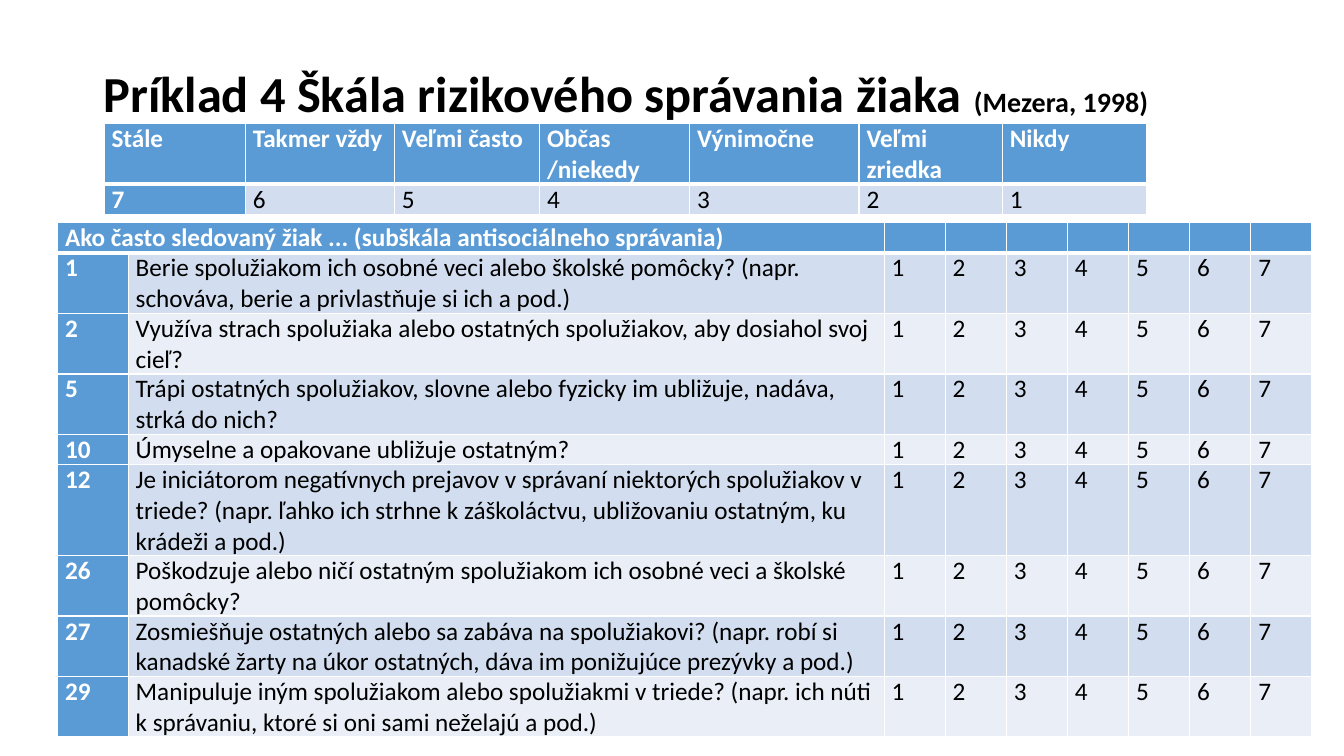
from dataclasses import dataclass

from lxml import etree
from pptx import Presentation
from pptx import util as u
from pptx.dml.color import RGBColor
from pptx.enum import text
from pptx.oxml import ns

COLORS = {
    "accent": "5B9BD5",
    "band_dark": "D2DEEF",
    "band_light": "EAEFF7",
    "white": "FFFFFF",
    "black": "000000",
}
FONT = "Calibri"
RATINGS = [str(rating) for rating in range(1, 8)]


@dataclass
class Grid:
    left: float
    top: float
    height: float
    widths: list[float]
    row_heights: list[float]
    rows: list[list[str]]
    header_span: int = 1


@dataclass
class Question:
    number: int
    wording: str
    height: float


QUESTIONS = [
    Question(1, "Berie spolužiakom ich osobné veci alebo školské pomôcky? (napr. "
                "schováva, berie a privlastňuje si ich a pod.)", 1.5),
    Question(2, "Využíva strach spolužiaka alebo ostatných spolužiakov, "
                "aby dosiahol svoj cieľ?", 1.02),
    Question(5, "Trápi ostatných spolužiakov, slovne alebo fyzicky im ubližuje, "
                "nadáva, strká do nich?", 1.02),
    Question(10, "Úmyselne a opakovane ubližuje ostatným?", 0.51),
    Question(12, "Je iniciátorom negatívnych prejavov v správaní niektorých "
                 "spolužiakov v triede? (napr. ľahko ich strhne k záškoláctvu, "
                 "ubližovaniu ostatným, ku krádeži a pod.)", 2.01),
    Question(26, "Poškodzuje alebo ničí ostatným spolužiakom ich osobné veci "
                 "a školské pomôcky?", 1.02),
    Question(27, "Zosmiešňuje ostatných alebo sa zabáva na spolužiakovi? (napr. robí si "
                 "kanadské žarty na úkor ostatných, dáva im ponižujúce prezývky "
                 "a pod.)", 1.5),
    Question(29, "Manipuluje iným spolužiakom alebo spolužiakmi v triede? (napr. ich núti "
                 "k správaniu, ktoré si oni sami neželajú a pod.)", 1.5),
]

SCALE = Grid(
    left=2.62, top=3.12, height=2.29,
    widths=[3.56, 3.76, 3.66, 3.78, 4.27, 3.61, 3.63],
    row_heights=[1.04, 0.53],
    rows=[
        ["Stále", "Takmer vždy", "Veľmi často", "Občas\n/niekedy", "Výnimočne",
         "Veľmi zriedka", "Nikdy"],
        RATINGS[::-1],
    ],
)
SURVEY = Grid(
    left=1.45, top=5.61, height=12.95,
    widths=[1.78, 19.05] + [1.54] * len(RATINGS),
    row_heights=[0.51] + [question.height for question in QUESTIONS],
    rows=[["Ako často sledovaný žiak ... (subškála antisociálneho správania)", ""]
          + [""] * len(RATINGS)]
    + [[str(question.number), question.wording] + RATINGS for question in QUESTIONS],
    header_span=2,
)


def color(name: str) -> RGBColor:
    return RGBColor.from_string(COLORS[name])


def add_borders(cell, widths: dict[str, float]) -> None:
    properties = cell._tc.get_or_add_tcPr()
    for side, width in widths.items():
        line = etree.SubElement(properties, ns.qn(f"a:ln{side}"), w=str(u.Pt(width)))
        fill = etree.SubElement(line, ns.qn("a:solidFill"))
        etree.SubElement(fill, ns.qn("a:srgbClr"), val=COLORS["white"])


def style_cell(cell, row: int, column: int) -> None:
    heading = row == 0 or column == 0
    band = "band_dark" if row % 2 else "band_light"
    add_borders(cell, {"L": 1, "R": 1, "T": 3 if row == 1 else 1, "B": 3 if row == 0 else 1})
    cell.fill.solid()
    cell.fill.fore_color.rgb = color("accent" if heading else band)
    cell.margin_left = cell.margin_right = u.Cm(0.19)
    cell.margin_top = cell.margin_bottom = u.Cm(0)
    for para in cell.text_frame.paragraphs:
        para.font.name = FONT
        para.font.size = u.Pt(18)
        para.font.bold = heading
        para.font.color.rgb = color("white" if heading else "black")


def add_grid(page, grid: Grid) -> None:
    frame = page.shapes.add_table(
        len(grid.rows), len(grid.widths), u.Cm(grid.left), u.Cm(grid.top),
        u.Cm(sum(grid.widths)), u.Cm(grid.height))
    table = frame.table
    for column, width in zip(table.columns, grid.widths):
        column.width = u.Cm(width)
    for row, height in zip(table.rows, grid.row_heights):
        row.height = u.Cm(height)
    frame.height = u.Cm(grid.height)
    if grid.header_span > 1:
        table.cell(0, 0).merge(table.cell(0, grid.header_span - 1))
    for row, wordings in enumerate(grid.rows):
        for column, wording in enumerate(wordings):
            cell = table.cell(row, column)
            if wording:
                cell.text_frame.text = wording
            style_cell(cell, row, column)


def add_title(page) -> None:
    box = page.shapes.add_textbox(u.Cm(2.36), u.Cm(0.58), u.Cm(29.21), u.Cm(3.68))
    box.text_frame.word_wrap = True
    box.text_frame.vertical_anchor = text.MSO_ANCHOR.MIDDLE
    para = box.text_frame.paragraphs[0]
    para.line_spacing = 0.9
    para.font.name = FONT
    para.font.bold = True
    para.font.color.rgb = color("black")
    for wording, size in (("Príklad 4 Škála rizikového správania žiaka ", 36),
                          ("(Mezera, 1998)", 20)):
        span = para.add_run()
        span.text = wording
        span.font.size = u.Pt(size)


def main() -> None:
    deck = Presentation()
    deck.slide_width = u.Cm(33.87)
    deck.slide_height = u.Cm(19.05)
    page = deck.slides.add_slide(deck.slide_layouts[6])
    add_title(page)
    for grid in (SCALE, SURVEY):
        add_grid(page, grid)
    deck.save("out.pptx")


if __name__ == "__main__":
    main()
